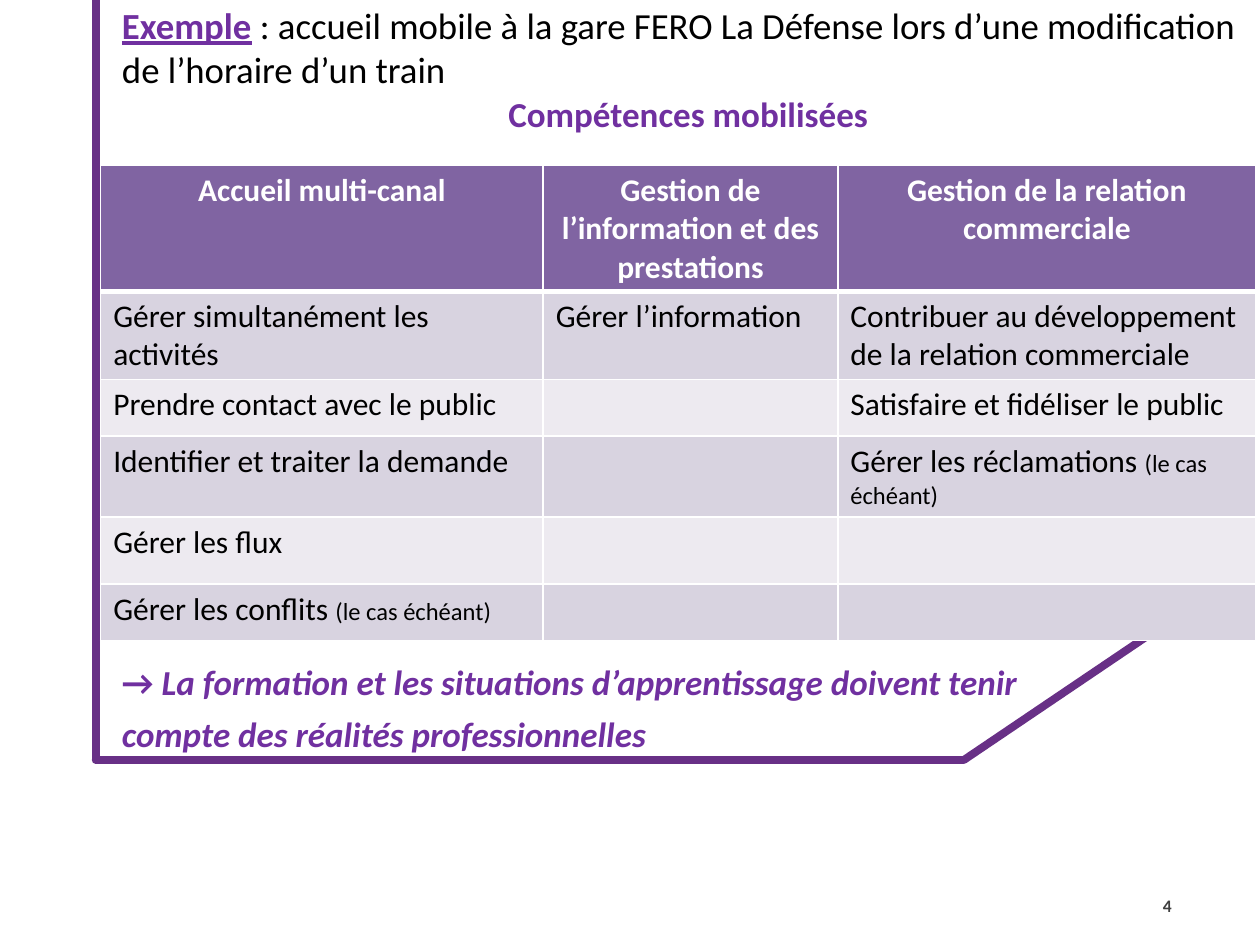
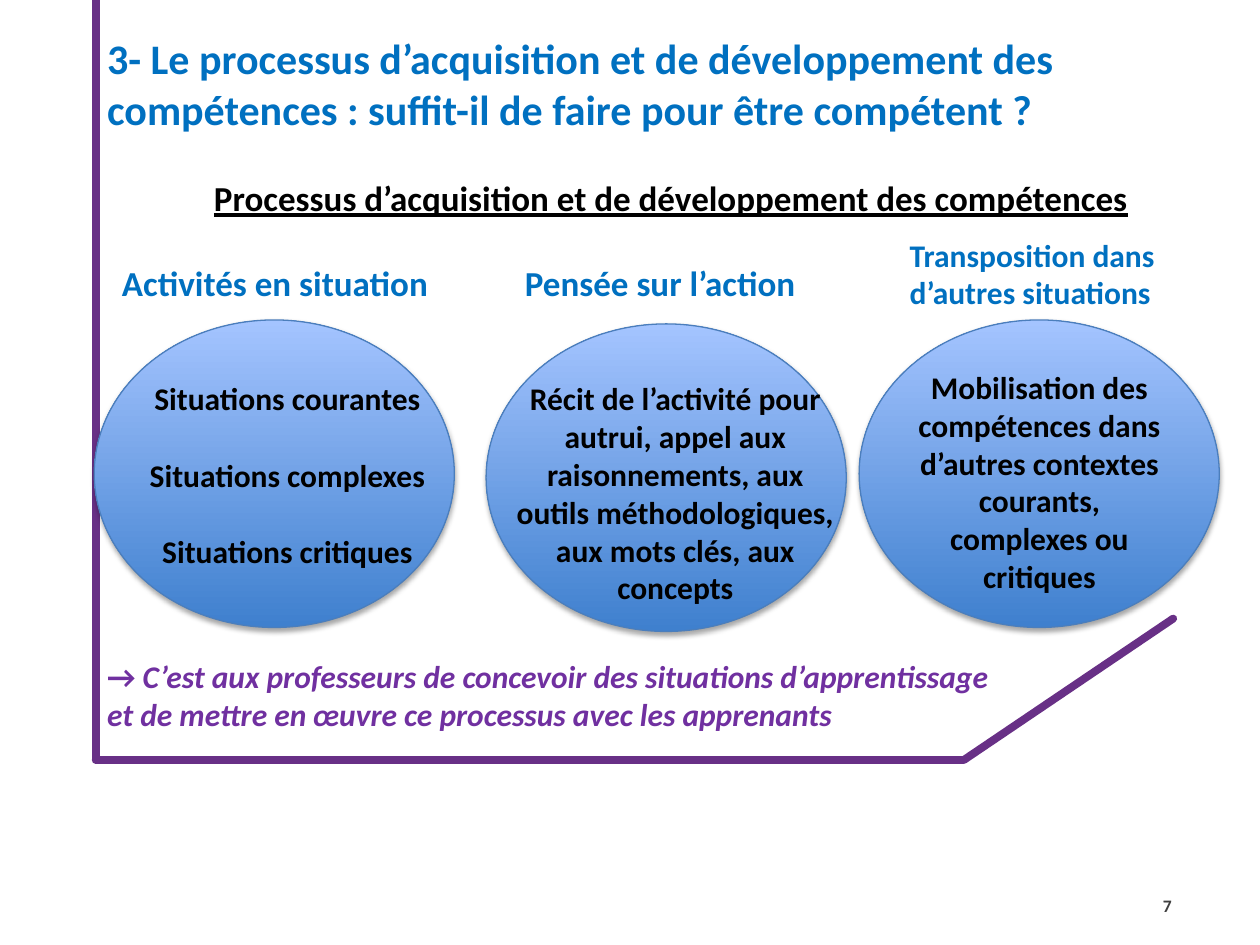
import pptx
import pptx.dml.color
import pptx.enum.shapes
import pptx.enum.text
import pptx.oxml
import pptx.oxml.ns
import pptx.util
from lxml import etree

Cm = pptx.util.Cm
Pt = pptx.util.Pt
RGBColor = pptx.dml.color.RGBColor
Align = pptx.enum.text.PP_ALIGN
Anchor = pptx.enum.text.MSO_ANCHOR

FONT = "Calibri"
BLACK = RGBColor(0x00, 0x00, 0x00)
WHITE = RGBColor(0xFF, 0xFF, 0xFF)
GREY = RGBColor(0x40, 0x40, 0x40)
BLUE = RGBColor(0x00, 0x70, 0xC0)
PURPLE = RGBColor(0x70, 0x30, 0xA0)
FRAME_PURPLE = RGBColor(0x68, 0x30, 0x86)
HEADER_FILL = RGBColor(0x80, 0x64, 0xA2)
ROW_FILLS = (RGBColor(0xED, 0xEA, 0xF0), RGBColor(0xD8, 0xD3, 0xE0))
ELLIPSE_DARK = RGBColor(0x3F, 0x80, 0xCE)
ELLIPSE_LIGHT = RGBColor(0xA4, 0xC4, 0xFF)
ELLIPSE_LINE = RGBColor(0x4B, 0x7E, 0xBC)

FRAME_LINES = (
    (1.93, 15.32, 19.41, 15.32),
    (19.43, 15.32, 23.65, 12.47),
    (1.93, 15.29, 1.93, 0),
)
IF_NEEDED = ("(le cas échéant)", {"size": 14})
COLUMN_WIDTHS = (8.92, 5.94, 8.43)
ROW_HEIGHTS = (2.54, 1.78, 1.14, 1.63, 1.35, 1.14)
SKILLS = (
    ("Accueil multi-canal", "Gestion de l’information et des prestations",
     "Gestion de la relation commerciale"),
    ("Gérer simultanément les activités", "Gérer l’information",
     "Contribuer au développement de la relation commerciale"),
    ("Prendre contact avec le public", "", "Satisfaire et fidéliser le public"),
    ("Identifier et traiter la demande", "",
     [("Gérer les réclamations ", {}), IF_NEEDED]),
    ("Gérer les flux", "", ""),
    ([("Gérer les conflits ", {}), IF_NEEDED], "", ""),
)


def add_runs(paragraph, content, size=18, color=BLACK, bold=False, italic=False):
    runs = [(content, {})] if isinstance(content, str) else content
    for text, changes in runs:
        run = paragraph.add_run()
        run.text = text
        font = run.font
        font.name = FONT
        font.size = Pt(changes.get("size", size))
        font.color.rgb = changes.get("color", color)
        font.bold = changes.get("bold", bold)
        font.italic = changes.get("italic", italic)
        font.underline = changes.get("underline", False)


def add_text(slide, box, paragraphs, align=Align.LEFT, gap=0, anchor=Anchor.TOP, **style):
    frame = slide.shapes.add_textbox(*map(Cm, box)).text_frame
    frame.word_wrap = True
    frame.vertical_anchor = anchor
    frame.margin_left = frame.margin_right = frame.margin_top = frame.margin_bottom = 0
    for index, content in enumerate(paragraphs):
        paragraph = frame.add_paragraph() if index else frame.paragraphs[0]
        paragraph.alignment = align
        if index:
            paragraph.space_before = Pt(gap)
        add_runs(paragraph, content, **style)


def add_frame_line(slide, ends):
    line = slide.shapes.add_connector(
        pptx.enum.shapes.MSO_CONNECTOR.STRAIGHT, *map(Cm, ends))
    line.line.color.rgb = FRAME_PURPLE
    line.line.width = Pt(4.5)
    line.line._get_or_add_ln().set("cap", "rnd")
    etree.SubElement(line._element.spPr, pptx.oxml.ns.qn("a:effectLst"))


def add_framed_slide(presentation, number):
    slide = presentation.slides.add_slide(presentation.slide_layouts[6])
    for ends in FRAME_LINES:
        add_frame_line(slide, ends)
    add_text(slide, (22.6, 17.75, 1.02, 1.02), [number], align=Align.RIGHT,
             anchor=Anchor.MIDDLE, size=10, color=GREY, bold=True)
    return slide


def add_conclusion(slide, left, top, lines, size, gap=0):
    arrow = ("→ ", {"italic": False})
    add_text(slide, (left, top, 20, 2), [[arrow, (lines[0], {})], *lines[1:]],
             gap=gap, size=size, color=PURPLE, bold=True, italic=True)


def add_border(cell, side, width):
    properties = cell._tc.get_or_add_tcPr()
    properties.append(pptx.oxml.parse_xml(
        f'<a:ln{side} {pptx.oxml.ns.nsdecls("a")} w="{Pt(width)}"><a:solidFill>'
        f'<a:srgbClr val="{WHITE}"/></a:solidFill></a:ln{side}>'))


def fill_cell(cell, content, row_index):
    header = row_index == 0
    for side in "LRTB":
        under_header = (row_index, side) in ((0, "B"), (1, "T"))
        add_border(cell, side, 3 if under_header else 1)
    cell.fill.solid()
    cell.fill.fore_color.rgb = HEADER_FILL if header else ROW_FILLS[row_index % 2]
    paragraph = cell.text_frame.paragraphs[0]
    paragraph.alignment = Align.CENTER if header else Align.LEFT
    if content:
        add_runs(paragraph, content, color=WHITE if header else BLACK, bold=header)


def add_skills_table(slide):
    table = slide.shapes.add_table(
        len(SKILLS), len(COLUMN_WIDTHS), Cm(2.03), Cm(3.33),
        Cm(sum(COLUMN_WIDTHS)), Cm(sum(ROW_HEIGHTS))).table
    for column, width in zip(table.columns, COLUMN_WIDTHS):
        column.width = Cm(width)
    for row_index, (height, contents) in enumerate(zip(ROW_HEIGHTS, SKILLS)):
        table.rows[row_index].height = Cm(height)
        for column_index, content in enumerate(contents):
            fill_cell(table.cell(row_index, column_index), content, row_index)


def add_ellipse(slide, left, top):
    ellipse = slide.shapes.add_shape(
        pptx.enum.shapes.MSO_SHAPE.OVAL, Cm(left), Cm(top), Cm(7.26), Cm(6.2))
    ellipse.fill.gradient()
    ellipse.fill.gradient_angle = 90
    for stop, color in zip(ellipse.fill.gradient_stops, (ELLIPSE_DARK, ELLIPSE_LIGHT)):
        stop.color.rgb = color
    ellipse.line.color.rgb = ELLIPSE_LINE
    ellipse.line.width = Pt(0.75)
    ellipse.shadow.inherit = False
    effects = ellipse._element.spPr.find(pptx.oxml.ns.qn("a:effectLst"))
    effects.append(pptx.oxml.parse_xml(
        f'<a:outerShdw {pptx.oxml.ns.nsdecls("a")} blurRad="{Pt(3.1)}" dist="{Pt(1.8)}" '
        'dir="5400000" rotWithShape="0"><a:srgbClr val="000000">'
        '<a:alpha val="35000"/></a:srgbClr></a:outerShdw>'))


def build_example_slide(presentation):
    slide = add_framed_slide(presentation, "4")
    add_text(slide, (2.46, 0.05, 22.83, 1.8), [[
        ("Exemple", {"color": PURPLE, "bold": True, "underline": True}),
        (" : accueil mobile à la gare FERO La Défense lors d’une modification "
         "de l’horaire d’un train", {}),
    ]], size=21)
    add_text(slide, (2.46, 1.86, 22.83, 0.9), ["Compétences mobilisées"],
             align=Align.CENTER, size=20, color=PURPLE, bold=True)
    add_skills_table(slide)
    add_conclusion(slide, 2.46, 13.31, (
        "La formation et les situations d’apprentissage doivent tenir",
        "compte des réalités professionnelles"), size=20, gap=6)


def build_process_slide(presentation):
    slide = add_framed_slide(presentation, "7")
    add_text(slide, (2.16, 0.66, 22.73, 2.1), [
        "3- Le processus d’acquisition et de développement des compétences : "
        "suffit-il de faire pour être compétent ?"], size=24, color=BLUE, bold=True)
    add_text(slide, (2.16, 3.56, 22.73, 0.9), [[
        ("Processus d’acquisition et de développement des compétences",
         {"underline": True})]], align=Align.CENTER, size=20, bold=True)

    stages = (
        ("Activités en situation", (2.46, 5.27, 7, 0.9), 20, (1.9, 6.45),
         (2.95, 7.65, 5.69, 3.9), 22,
         ["Situations courantes", "Situations complexes", "Situations critiques"]),
        ("Pensée sur l’action", (10.58, 5.27, 7, 0.9), 20, (9.8, 6.53),
         (10.34, 7.65, 6.55, 4.6), 0,
         ["Récit de l’activité pour autrui, appel aux raisonnements, "
          "aux outils méthodologiques,", "aux mots clés, aux concepts"]),
        ("Transposition dans d’autres situations", (18.34, 4.75, 5.36, 1.6), 18,
         (17.32, 6.45), (18.29, 7.42, 5.33, 4.6), 0,
         ["Mobilisation des compétences dans d’autres contextes courants, "
          "complexes ou critiques"]),
    )
    for heading, heading_box, size, corner, text_box, gap, paragraphs in stages:
        add_text(slide, heading_box, [heading], size=size, color=BLUE, bold=True)
        add_ellipse(slide, *corner)
        add_text(slide, text_box, paragraphs, align=Align.CENTER, gap=gap, bold=True)

    add_conclusion(slide, 2.16, 13.24, (
        "C’est aux professeurs de concevoir des situations d’apprentissage",
        "et de mettre en œuvre ce processus avec les apprenants"), size=18)


def main():
    presentation = pptx.Presentation()
    presentation.slide_width = Cm(25.4)
    presentation.slide_height = Cm(19.05)
    build_example_slide(presentation)
    build_process_slide(presentation)
    presentation.save("out.pptx")


if __name__ == "__main__":
    main()
